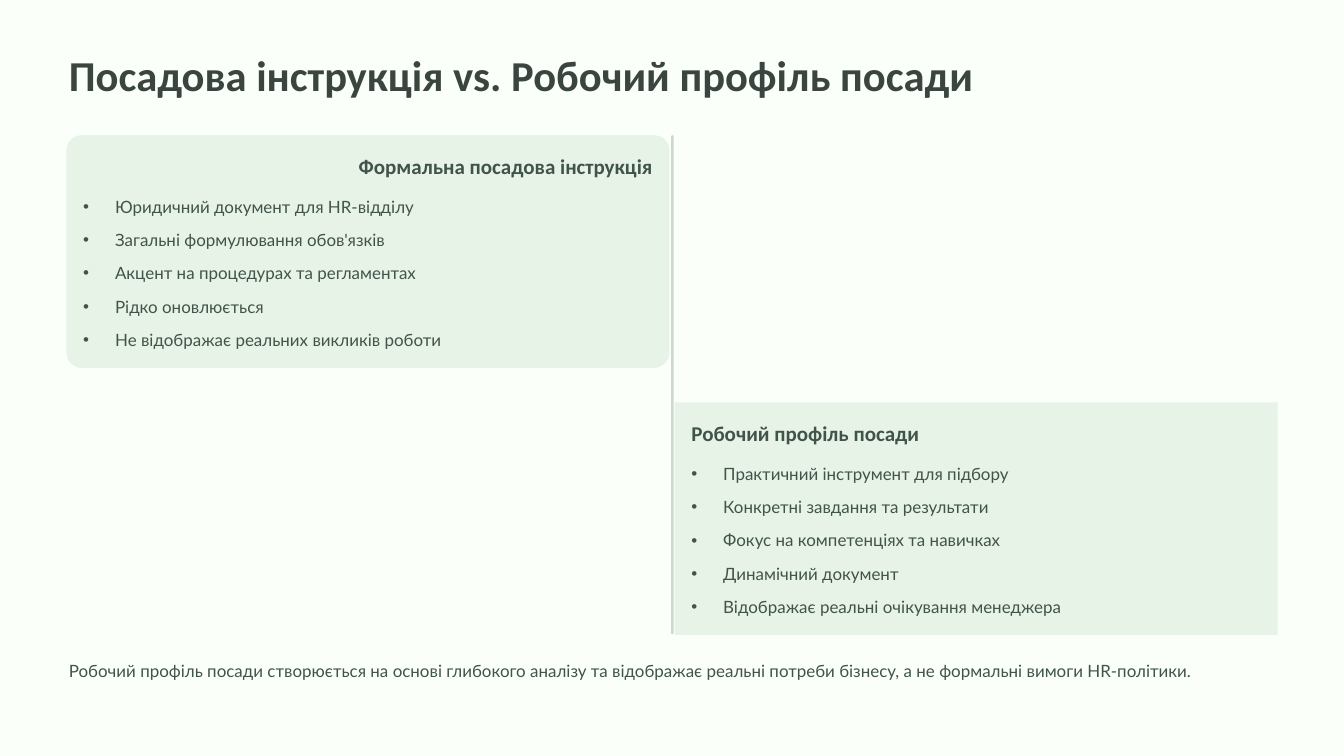
from pptx import Presentation
from pptx.dml.color import RGBColor
from pptx.enum.shapes import MSO_SHAPE as Shape
from pptx.enum.text import MSO_ANCHOR as Anchor, MSO_AUTO_SIZE as Fit, PP_ALIGN as Align
from pptx.oxml import parse_xml
from pptx.oxml.ns import nsdecls
from pptx.util import Inches, Pt

TITLE = "Посадова інструкція vs. Робочий профіль посади"
CARDS = [
    {
        "head": "Формальна посадова інструкція",
        "align": Align.RIGHT,
        "shape": Shape.ROUNDED_RECTANGLE,
        "at": (0.79, 1.61),
        "items": [
            "Юридичний документ для HR-відділу",
            "Загальні формулювання обов'язків",
            "Акцент на процедурах та регламентах",
            "Рідко оновлюється",
            "Не відображає реальних викликів роботи",
        ],
    },
    {
        "head": "Робочий профіль посади",
        "align": Align.LEFT,
        "shape": Shape.RECTANGLE,
        "at": (8.03, 4.79),
        "items": [
            "Практичний інструмент для підбору",
            "Конкретні завдання та результати",
            "Фокус на компетенціях та навичках",
            "Динамічний документ",
            "Відображає реальні очікування менеджера",
        ],
    },
]
NOTE = (
    "Робочий профіль посади створюється на основі глибокого аналізу та відображає "
    "реальні потреби бізнесу, а не формальні вимоги HR-політики."
)

PAPER = RGBColor(0xFA, 0xFF, 0xFA)
PANEL = RGBColor(0xE8, 0xF3, 0xE8)
RULE = RGBColor(0xCE, 0xD9, 0xCE)
DARK = RGBColor(0x3B, 0x45, 0x40)
GREEN = RGBColor(0x40, 0x54, 0x49)

CARD_W, CARD_H = 7.18, 2.77
PAD = 0.2
TEXT_W = CARD_W - 2 * PAD
INDENT = 0.38

HEADING = {"name": "Calibri", "size": 18, "line": 22.5, "color": GREEN, "bold": True}
BODY = {"name": "Lato", "size": 14.5, "line": 23.5, "color": GREEN, "bold": False}
TOP = {"name": "Calibri", "size": 36.5, "line": 45.5, "color": DARK, "bold": True}


def place(shape, x, y, w, h):
    shape.left, shape.top = Inches(x), Inches(y)
    shape.width, shape.height = Inches(w), Inches(h)


def write(shape, lines, style, align=Align.LEFT, gap=0, bullet=False):
    frame = shape.text_frame
    frame.text = "\n".join(lines)
    frame.word_wrap = True
    frame.auto_size = Fit.NONE
    frame.vertical_anchor = Anchor.TOP
    frame.margin_left = frame.margin_right = 0
    frame.margin_top = frame.margin_bottom = 0
    for para in frame.paragraphs:
        if bullet:
            props = para._p.get_or_add_pPr()
            props.set("marL", str(Inches(INDENT)))
            props.set("indent", str(-Inches(INDENT)))
            props.append(parse_xml(f'<a:buChar {nsdecls("a")} char="•"/>'))
        para.alignment = align
        para.line_spacing = Pt(style["line"])
        para.space_before = Pt(0)
        para.space_after = Pt(gap)
        font = para.font
        font.name, font.size = style["name"], Pt(style["size"])
        font.bold = style["bold"]
        font.color.rgb = style["color"]


def block(slide, kind, x, y, w, h, color):
    shape = slide.shapes.add_shape(kind, Inches(x), Inches(y), Inches(w), Inches(h))
    shape.shadow.inherit = False
    shape.fill.solid()
    shape.fill.fore_color.rgb = color
    shape.line.fill.background()
    slide.shapes.title.element.addprevious(shape.element)
    return shape


def main():
    deck = Presentation()
    deck.slide_width, deck.slide_height = Inches(16), Inches(9)
    slide = deck.slides.add_slide(deck.slide_layouts.get_by_name("Comparison"))
    slide.background.fill.solid()
    slide.background.fill.fore_color.rgb = PAPER

    title, *slots = slide.placeholders
    place(title, 0.82, 0.56, 13.03, 0.64)
    write(title, [TITLE], TOP)

    rule = block(slide, Shape.ROUNDED_RECTANGLE, 7.99, 1.61, 0.03, 5.94, RULE)
    rule.adjustments[0] = 0.5

    for card, head, body in zip(CARDS, slots[::2], slots[1::2]):
        x, y = card["at"]
        panel = block(slide, card["shape"], x, y, CARD_W, CARD_H, PANEL)
        if card["shape"] == Shape.ROUNDED_RECTANGLE:
            panel.adjustments[0] = 0.066
        place(head, x + PAD, y + PAD, TEXT_W, 0.32)
        write(head, [card["head"]], HEADING, card["align"])
        place(body, x + PAD, y + 0.64, TEXT_W, 1.95)
        write(body, card["items"], BODY, gap=5.1, bullet=True)

    note = slide.shapes.add_textbox(0, 0, 0, 0)
    place(note, 0.82, 7.78, 14.37, 0.65)
    write(note, [NOTE], BODY)
    deck.save("out.pptx")


if __name__ == "__main__":
    main()
